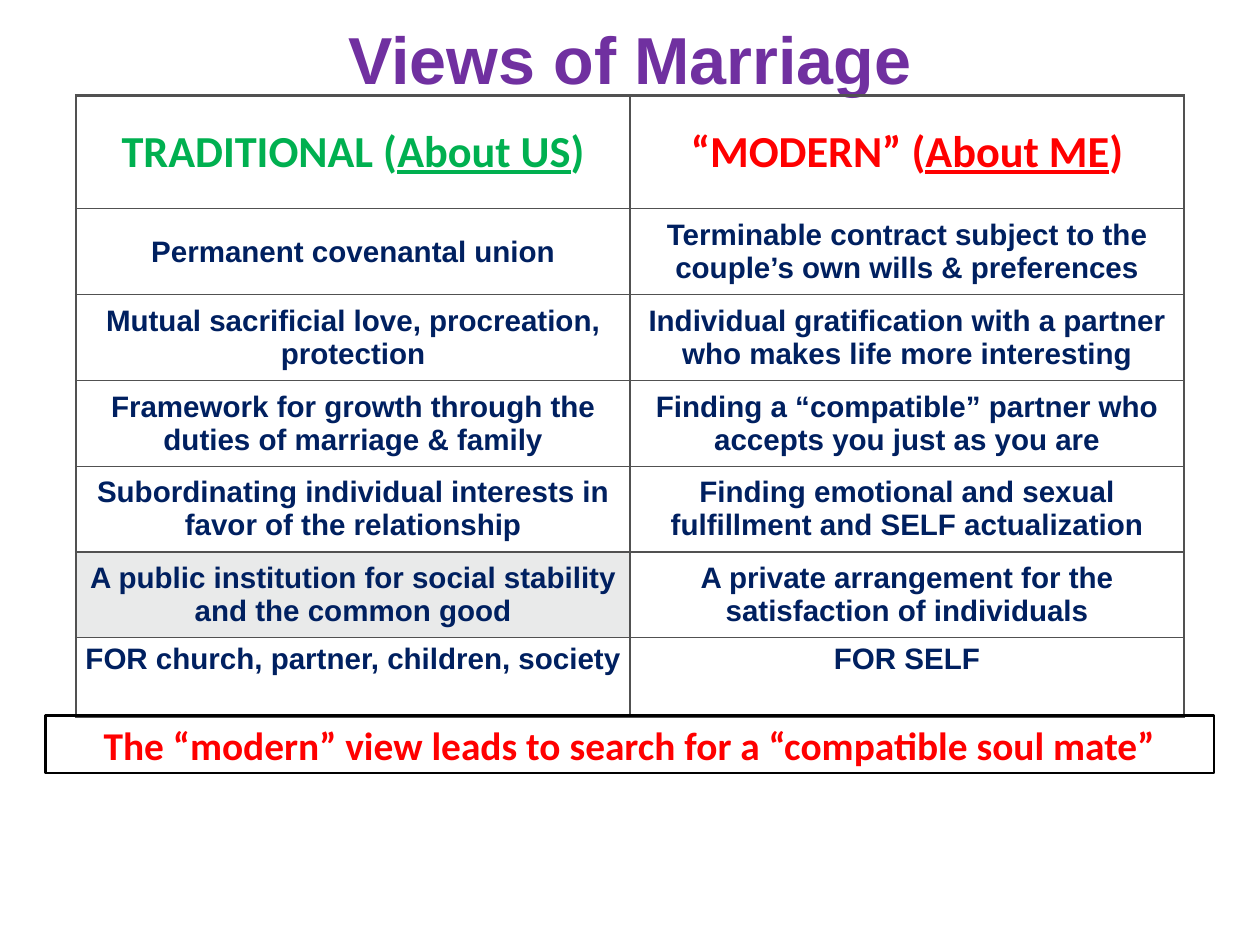
"""Build the slide comparing traditional and modern views of marriage."""
from lxml import etree
from pptx import Presentation
from pptx.dml.color import RGBColor
from pptx.enum.shapes import MSO_SHAPE
from pptx.enum.text import MSO_ANCHOR, PP_ALIGN
from pptx.oxml.ns import qn
from pptx.util import Cm, Pt

TITLE = "Views of Marriage"
BANNER = "The “modern” view leads to search for a “compatible soul mate”"
HEADINGS = [("TRADITIONAL (", "About US", ")"), ("“MODERN” (", "About ME", ")")]
VIEWS = [
    ("Permanent covenantal union",
     "Terminable contract subject to the couple’s own wills & preferences"),
    ("Mutual sacrificial love, procreation, protection",
     "Individual gratification with a partner who makes life more interesting"),
    ("Framework for growth through the duties of marriage & family",
     "Finding a “compatible” partner who accepts you just as you are"),
    ("Subordinating individual interests in favor of the relationship",
     "Finding emotional and sexual fulfillment and SELF actualization"),
    ("A public institution for social stability and the common good",
     "A private arrangement for the satisfaction of individuals"),
    ("FOR church, partner, children, society", "FOR SELF"),
]
SHADED = (5, 0)

PURPLE = RGBColor(0x70, 0x30, 0xA0)
GREEN = RGBColor(0x00, 0xB0, 0x50)
RED = RGBColor(0xFF, 0x00, 0x00)
NAVY = RGBColor(0x00, 0x20, 0x60)
BLACK = RGBColor(0x00, 0x00, 0x00)
GRID = RGBColor(0x51, 0x51, 0x51)
SHADE = RGBColor(0xB8, 0xBA, 0xBC)

LEFT, TABLE_TOP, COL_WIDTH = 2.18, 2.74, 15.88
ROW_HEIGHTS = [3.25] + [2.46] * 5 + [2.26]
THICK, THIN = Pt(2.25), Pt(1)


def write(tf, runs, size, font, color):
    p = tf.paragraphs[0]
    for i, text in enumerate(runs):
        r = p.add_run()
        r.text = text
        if i == 1:
            r.font.underline = True
    p.alignment = PP_ALIGN.CENTER
    p.font.size, p.font.name, p.font.bold = Pt(size), font, True
    p.font.color.rgb = color


def set_frame(tf):
    tf.word_wrap = True
    tf.vertical_anchor = MSO_ANCHOR.MIDDLE
    tf.margin_left = tf.margin_right = tf.margin_top = tf.margin_bottom = 0


def set_borders(cell, widths):
    tcPr = cell._tc.get_or_add_tcPr()
    for side, width in zip(("lnL", "lnR", "lnT", "lnB"), widths):
        ln = etree.SubElement(tcPr, qn(f"a:{side}"), w=str(width))
        fill = etree.SubElement(ln, qn("a:solidFill"))
        etree.SubElement(fill, qn("a:srgbClr"), val=str(GRID))


def fill_cell(cell, shaded):
    if not shaded:
        cell.fill.background()
        return
    cell.fill.solid()
    cell.fill.fore_color.rgb = SHADE
    color = cell._tc.tcPr.find(f"{qn('a:solidFill')}/{qn('a:srgbClr')}")
    etree.SubElement(color, qn("a:alpha"), val="30000")


def add_views_table(s):
    rows = [HEADINGS] + [[(text,) for text in pair] for pair in VIEWS]
    last = len(rows) - 1
    table = s.shapes.add_table(len(rows), 2, Cm(LEFT), Cm(TABLE_TOP),
                               Cm(2 * COL_WIDTH), Cm(sum(ROW_HEIGHTS))).table
    table.first_row = table.horz_banding = False
    for column in table.columns:
        column.width = Cm(COL_WIDTH)
    for i, row in enumerate(rows):
        table.rows[i].height = Cm(ROW_HEIGHTS[i])
        for j, runs in enumerate(row):
            cell = table.cell(i, j)
            cell.margin_left = cell.margin_right = Cm(0.15)
            cell.margin_top = cell.margin_bottom = Cm(0.15)
            cell.vertical_anchor = MSO_ANCHOR.TOP if i == last else MSO_ANCHOR.MIDDLE
            if i == 0:
                write(cell.text_frame, runs, 36, "Calibri", (GREEN, RED)[j])
            else:
                write(cell.text_frame, runs, 24, "Arial", NAVY)
            outer = (j == 0, j == 1, i == 0, i == last)
            set_borders(cell, [THICK if edge else THIN for edge in outer])
            fill_cell(cell, (i, j) == SHADED)


def main():
    prs = Presentation()
    prs.slide_width, prs.slide_height = Cm(36.12), Cm(27.1)
    s = prs.slides.add_slide(prs.slide_layouts[6])

    title = s.shapes.add_textbox(Cm(LEFT), Cm(0.18), Cm(2 * COL_WIDTH), Cm(2.97))
    set_frame(title.text_frame)
    write(title.text_frame, [TITLE], 54, "Arial", PURPLE)

    add_views_table(s)

    banner = s.shapes.add_shape(MSO_SHAPE.RECTANGLE, Cm(1.3), Cm(20.52), Cm(33.5), Cm(1.65))
    banner.shadow.inherit = False
    banner.fill.background()
    banner.line.color.rgb = BLACK
    banner.line.width = Pt(2)
    set_frame(banner.text_frame)
    write(banner.text_frame, [BANNER], 32, "Calibri", RED)

    prs.save("out.pptx")


if __name__ == "__main__":
    main()
